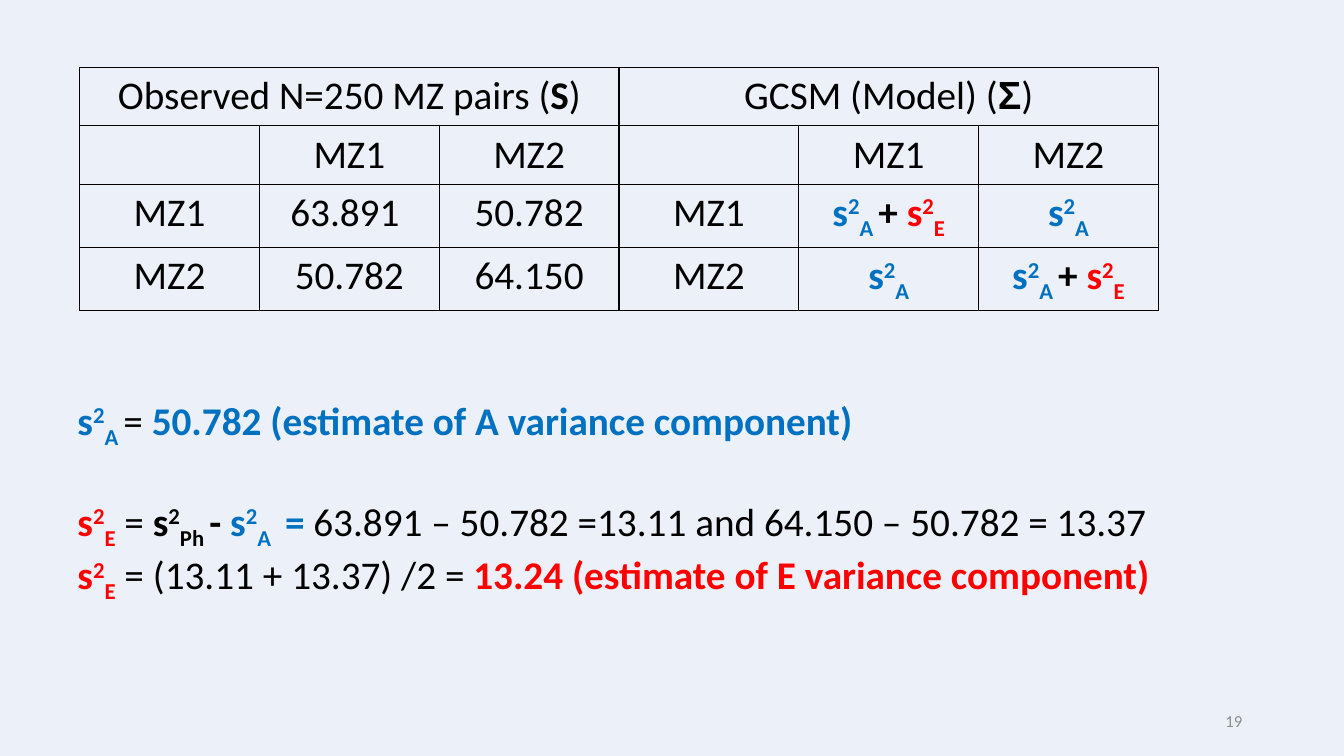
from dataclasses import dataclass

from pptx import Presentation
from pptx.dml.color import RGBColor
from pptx.enum.text import MSO_ANCHOR, PP_ALIGN
from pptx.oxml import parse_xml
from pptx.oxml.ns import nsdecls
from pptx.util import Inches, Pt

LEFT, CENTER, RIGHT = PP_ALIGN.LEFT, PP_ALIGN.CENTER, PP_ALIGN.RIGHT
TOP, MIDDLE = MSO_ANCHOR.TOP, MSO_ANCHOR.MIDDLE
BLANK_LAYOUT = 6
SUPERSCRIPT, SUBSCRIPT = 30000, -25000


@dataclass(frozen=True)
class Theme:
    background: str = "ECF1F9"
    text: str = "000000"
    additive: str = "0070C0"
    environment: str = "FF0000"
    muted: str = "8C8C8C"
    font: str = "Calibri"
    symbol_font: str = "Arial"
    body_size: int = 28
    number_size: int = 12
    border_width: int = 1


THEME = Theme()


@dataclass(frozen=True)
class Piece:
    """A stretch of text in one format."""
    text: str
    color: str = THEME.text
    bold: bool = False
    baseline: int = 0
    font: str = THEME.font
    size: int = THEME.body_size


def variance(subscript, color):
    """Return the pieces of s squared with a subscript."""
    return [Piece("s", color, True),
            Piece("2", color, True, SUPERSCRIPT),
            Piece(subscript, color, True, SUBSCRIPT)]


def write(paragraph, pieces, alignment=LEFT):
    paragraph.alignment = alignment
    for piece in pieces:
        run = paragraph.add_run()
        run.text = piece.text
        run.font.name = piece.font
        run.font.size = Pt(piece.size)
        run.font.bold = piece.bold
        run.font.color.rgb = RGBColor.from_string(piece.color)
        if piece.baseline:
            run._r.get_or_add_rPr().set("baseline", str(piece.baseline))


def add_text_frame(slide, box, anchor):
    text_frame = slide.shapes.add_textbox(*map(Inches, box)).text_frame
    text_frame.word_wrap = True
    text_frame.vertical_anchor = anchor
    return text_frame


def style_cell(cell):
    properties = cell._tc.get_or_add_tcPr()
    for side in ("lnL", "lnR", "lnT", "lnB"):
        properties.append(parse_xml(
            f'<a:{side} {nsdecls("a")} w="{Pt(THEME.border_width)}"><a:solidFill>'
            f'<a:srgbClr val="{THEME.text}"/></a:solidFill></a:{side}>'))
    cell.fill.background()


def add_covariance_table(slide, box):
    left, top, width, height = box
    model_variance = [*variance("A ", THEME.additive), Piece("+ ", bold=True),
                      *variance("E", THEME.environment)]
    model_covariance = variance("A", THEME.additive)
    first, second = [Piece("MZ1")], [Piece("MZ2")]
    observed = [Piece("Observed N=250 MZ pairs ("), Piece("S", bold=True), Piece(")")]
    model = [Piece("GCSM (Model) ("),
             Piece("Σ", bold=True, font=THEME.symbol_font), Piece(")")]
    rows = [
        [observed, [], [], model, [], []],
        [[], first, second, [], first, second],
        [first, [Piece("63.891 ")], [Piece("50.782")],
         first, model_variance, model_covariance],
        [second, [Piece("50.782")], [Piece("64.150")],
         second, model_covariance, model_variance],
    ]
    column_count = len(rows[0])
    table = slide.shapes.add_table(
        len(rows), column_count, Inches(left), Inches(top),
        Inches(width), Inches(height)).table
    table.first_row = table.horz_banding = False
    for column in table.columns:
        column.width = Inches(width / column_count)
    for row, share in zip(table.rows, (0.24, 0.24, 0.26, 0.26)):
        row.height = Inches(height * share)
    for row_index, row in enumerate(rows):
        for column_index, pieces in enumerate(row):
            cell = table.cell(row_index, column_index)
            style_cell(cell)
            write(cell.text_frame.paragraphs[0], pieces, CENTER)
    half = column_count // 2
    for start in (0, half):
        table.cell(0, start).merge(table.cell(0, start + half - 1))


def add_estimates(slide, box):
    blue, red = THEME.additive, THEME.environment
    lines = [
        [*variance("A ", blue), Piece("= "),
         Piece("50.782 (estimate of A variance component)", blue, True)],
        [*variance("E", red), Piece(" = "), *variance("Ph ", THEME.text),
         Piece("- ", bold=True), *variance("A ", blue), Piece(" = ", blue, True),
         Piece("63.891 – 50.782 =13.11 and 64.150 – 50.782 = 13.37")],
        [*variance("E", red), Piece(" = (13.11 + 13.37) /2 = "),
         Piece("13.24 (estimate of E variance component)", red, True)],
    ]
    text_frame = add_text_frame(slide, box, TOP)
    for index, pieces in enumerate(lines):
        paragraph = text_frame.add_paragraph() if index else text_frame.paragraphs[0]
        write(paragraph, pieces)
    text_frame.paragraphs[1].space_before = Pt(34)


def add_slide_number(slide, box, number):
    text_frame = add_text_frame(slide, box, MIDDLE)
    write(text_frame.paragraphs[0],
          [Piece(number, THEME.muted, size=THEME.number_size)], RIGHT)


def main():
    presentation = Presentation()
    presentation.slide_width = Inches(13.33)
    presentation.slide_height = Inches(7.5)
    slide = presentation.slides.add_slide(presentation.slide_layouts[BLANK_LAYOUT])
    background = slide.background.fill
    background.solid()
    background.fore_color.rgb = RGBColor.from_string(THEME.background)
    add_covariance_table(slide, (0.79, 0.67, 10.7, 2.41))
    add_estimates(slide, (0.67, 3.88, 11.31, 2.29))
    add_slide_number(slide, (9.42, 6.95, 3, 0.4), "19")
    presentation.save("out.pptx")


if __name__ == "__main__":
    main()
